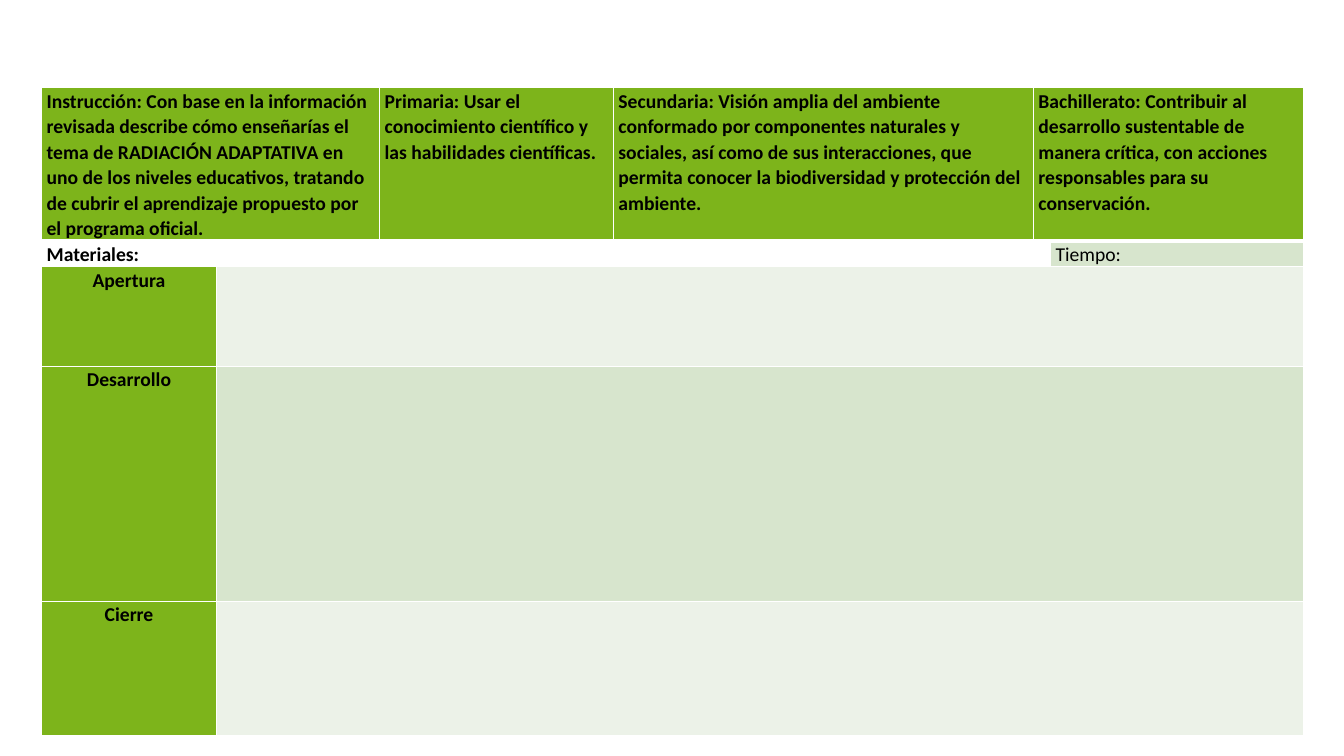
from dataclasses import dataclass

from lxml.etree import SubElement
from pptx import Presentation
from pptx.dml.color import RGBColor as Rgb
from pptx.enum.text import PP_ALIGN as Align
from pptx.oxml.ns import qn
from pptx.util import Pt


@dataclass(frozen=True)
class Theme:
    font: str = "Calibri"
    size: float = 14
    ink: str = "000000"
    green: str = "7DB41B"
    sage: str = "D7E5CD"
    mist: str = "ECF2E8"
    border: str = "FFFFFF"
    thin: float = 1
    thick: float = 3


class LessonSlide:
    def __init__(self, presentation, theme):
        self.theme = theme
        self.slide = presentation.slides.add_slide(presentation.slide_layouts[6])

    def table(self, left, top, widths, heights):
        frame = self.slide.shapes.add_table(
            len(heights), len(widths), Pt(left), Pt(top), Pt(sum(widths)), Pt(sum(heights))
        )
        grid = frame.table
        grid.first_row = grid.horz_banding = False
        for column, width in zip(grid.columns, widths):
            column.width = Pt(width)
        for row, height in zip(grid.rows, heights):
            row.height = Pt(height)
        return grid

    def borders(self, cell, top, bottom):
        properties = cell._tc.get_or_add_tcPr()
        thin = self.theme.thin
        for side, weight in {"L": thin, "R": thin, "T": top, "B": bottom}.items():
            line = SubElement(properties, qn(f"a:ln{side}"), w=str(Pt(weight)))
            fill = SubElement(line, qn("a:solidFill"))
            SubElement(fill, qn("a:srgbClr"), val=self.theme.border)

    def cell(self, grid, row, first, span, text, color, bold=True, align=Align.LEFT):
        theme = self.theme
        margins = {"margin_left": Pt(3.6), "margin_right": Pt(3.6),
                   "margin_top": 0, "margin_bottom": 0}
        for column in range(first, first + span):
            part = grid.cell(row, column)
            for key, value in margins.items():
                setattr(part, key, value)
            self.borders(part, theme.thick if row == 1 else theme.thin,
                         theme.thick if row == 0 else theme.thin)
            if color:
                part.fill.solid()
                part.fill.fore_color.rgb = Rgb.from_string(color)
            else:
                part.fill.background()
        origin = grid.cell(row, first)
        if span > 1:
            origin.merge(grid.cell(row, first + span - 1))
        paragraph = origin.text_frame.paragraphs[0]
        paragraph.text = text
        formats = {"alignment": align, "line_spacing": 1.07, "space_after": Pt(8)}
        for key, value in formats.items():
            setattr(paragraph, key, value)
        letters = {"name": theme.font, "size": Pt(theme.size), "bold": bold}
        for font in [paragraph.font] + [run.font for run in paragraph.runs]:
            for key, value in letters.items():
                setattr(font, key, value)
            font.color.rgb = Rgb.from_string(theme.ink)


HEADINGS = [
    (0, 2, "Instrucción: Con base en la información revisada describe cómo enseñarías el tema de "
           "RADIACIÓN ADAPTATIVA en uno de los niveles educativos, tratando de cubrir el "
           "aprendizaje propuesto por el programa oficial."),
    (2, 1, "Primaria: Usar el conocimiento científico y las habilidades científicas."),
    (3, 1, "Secundaria: Visión amplia del ambiente conformado por componentes naturales y "
           "sociales, así como de sus interacciones, que permita conocer la biodiversidad y "
           "protección del ambiente."),
    (4, 2, "Bachillerato: Contribuir al desarrollo sustentable de manera crítica, con acciones "
           "responsables para su conservación."),
]


def main():
    presentation = Presentation()
    presentation.slide_width, presentation.slide_height = Pt(960), Pt(540)
    theme = Theme()
    lesson = LessonSlide(presentation, theme)
    plan = lesson.table(29.7, 62.7, [125, 116.5, 167, 300, 12.3, 180.5],
                        [109, 18.5, 71, 168, 96])
    for first, span, heading in HEADINGS:
        lesson.cell(plan, 0, first, span, heading, theme.green)
    lesson.cell(plan, 1, 0, 5, "Materiales:", None)
    lesson.cell(plan, 1, 5, 1, "Tiempo:", theme.sage, bold=False)
    stages = [("Apertura", theme.mist), ("Desarrollo", theme.sage), ("Cierre", theme.mist)]
    for row, (stage, shade) in enumerate(stages, start=2):
        lesson.cell(plan, row, 0, 1, stage, theme.green, align=Align.CENTER)
        lesson.cell(plan, row, 1, 5, "", shade)
    presentation.save("out.pptx")


if __name__ == "__main__":
    main()
